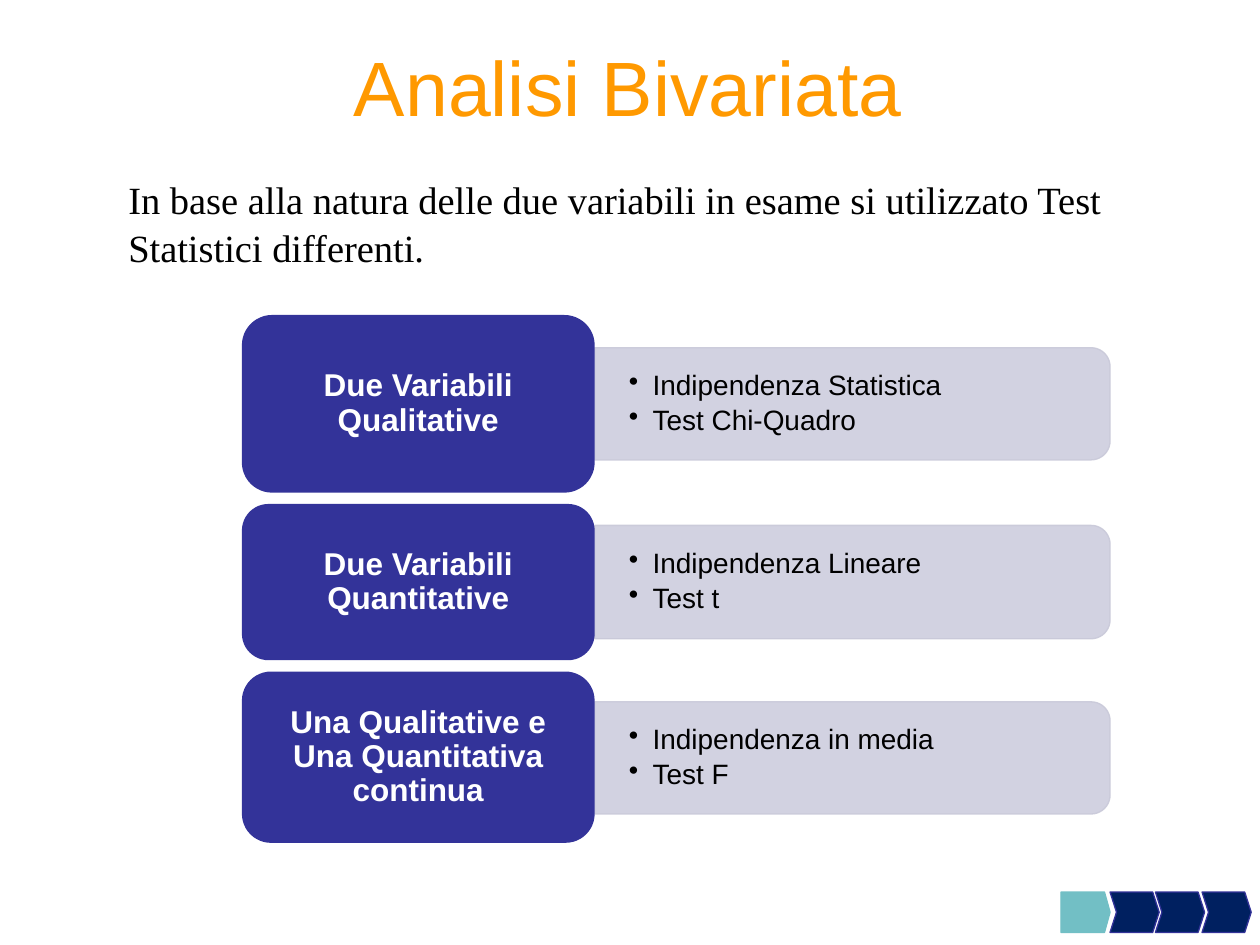
from dataclasses import dataclass
from math import cos, pi, sin

from lxml.etree import SubElement
from pptx import Presentation
from pptx.dml.color import RGBColor
from pptx.enum.shapes import MSO_SHAPE
from pptx.enum.text import MSO_ANCHOR, PP_ALIGN
from pptx.oxml.ns import qn
from pptx.shapes.autoshape import Shape
from pptx.slide import Slide
from pptx.text.text import TextFrame, _Paragraph
from pptx.util import Inches, Pt

ORANGE = RGBColor(0xFF, 0x99, 0x00)
BLACK = RGBColor(0x00, 0x00, 0x00)
WHITE = RGBColor(0xFF, 0xFF, 0xFF)
BLUE = RGBColor(0x33, 0x33, 0x99)
NAVY = RGBColor(0x00, 0x20, 0x60)
TEAL = RGBColor(0x72, 0xBF, 0xC5)
PALE = RGBColor(0xCE, 0xCE, 0xDE)
EDGE = RGBColor(0xC9, 0xC9, 0xD9)

LEFT, SPLIT, RIGHT = 1.92, 4.72, 8.81
CURVE = 0.15


@dataclass
class Row:
    name: str
    tests: tuple[str, ...]
    top: float
    height: float
    bar_top: float
    bar_height: float


@dataclass
class Step:
    left: float
    kind: MSO_SHAPE
    point: float
    fill: RGBColor
    edge: RGBColor


ROWS = (
    Row("Due Variabili Qualitative", ("Indipendenza Statistica", "Test Chi-Quadro"), 2.5, 1.41, 2.76, 0.89),
    Row("Due Variabili Quantitative", ("Indipendenza Lineare", "Test t"), 4, 1.24, 4.17, 0.9),
    Row("Una Qualitative e Una Quantitativa continua", ("Indipendenza in media", "Test F"), 5.33, 1.36, 5.57, 0.89),
)
STEPS = (
    Step(8.42, MSO_SHAPE.PENTAGON, 0.138, TEAL, TEAL),
    *(Step(left, MSO_SHAPE.CHEVRON, 0.16, NAVY, BLUE) for left in (8.81, 9.17, 9.54)),
)


def add_run(para: _Paragraph, text: str, size: float, color: RGBColor,
            font: str = "Arial", bold: bool = False) -> None:
    run = para.add_run()
    run.text = text
    run.font.size = Pt(size)
    run.font.name = font
    run.font.bold = bold
    run.font.color.rgb = color


def set_frame(frame: TextFrame, left: float, top: float, right: float) -> None:
    frame.word_wrap = True
    frame.vertical_anchor = MSO_ANCHOR.MIDDLE
    frame.margin_left, frame.margin_right = Inches(left), Inches(right)
    frame.margin_top = frame.margin_bottom = Inches(top)


def add_label(slide: Slide, left: float, top: float, width: float, height: float) -> TextFrame:
    box = slide.shapes.add_textbox(Inches(left), Inches(top), Inches(width), Inches(height))
    box.text_frame.word_wrap = True
    return box.text_frame


def paint(shape: Shape, fill: RGBColor, edge: RGBColor | None = None) -> None:
    shape.shadow.inherit = False
    shape.fill.solid()
    shape.fill.fore_color.rgb = fill
    if edge is None:
        shape.line.fill.background()
    else:
        shape.line.color.rgb = edge
        shape.line.width = Pt(0.75)


def fade(shape: Shape) -> None:
    for color in shape._element.spPr.iter(qn("a:srgbClr")):
        SubElement(color, qn("a:alpha"), val="90000")


def add_bullet(para: _Paragraph) -> None:
    props = para._p.get_or_add_pPr()
    props.set("marL", str(Inches(0.19)))
    props.set("indent", str(Inches(-0.19)))
    SubElement(props, qn("a:buChar"), char="•")


def add_bar(slide: Slide, row: Row) -> None:
    low = row.bar_top + row.bar_height
    turns = [i * pi / 20 for i in range(11)]
    edge = RIGHT - CURVE
    upper = [(edge + CURVE * sin(t), row.bar_top + CURVE * (1 - cos(t))) for t in turns]
    lower = [(edge + CURVE * cos(t), low - CURVE * (1 - sin(t))) for t in turns]
    points = [(Inches(x), Inches(y)) for x, y in [*upper, *lower, (SPLIT, low)]]
    pen = slide.shapes.build_freeform(Inches(SPLIT), Inches(row.bar_top))
    pen.add_line_segments(points, close=True)
    bar = pen.convert_to_shape()
    paint(bar, PALE, EDGE)
    fade(bar)
    frame = bar.text_frame
    set_frame(frame, 0.27, 0.18, 0.31)
    for i, test in enumerate(row.tests):
        para = frame.add_paragraph() if i else frame.paragraphs[0]
        para.alignment = PP_ALIGN.LEFT
        para.level = 1
        para.line_spacing = 0.9
        para.space_after = Pt(2.8)
        add_bullet(para)
        add_run(para, test, 16, BLACK)


def add_head(slide: Slide, row: Row) -> None:
    head = slide.shapes.add_shape(MSO_SHAPE.ROUNDED_RECTANGLE, Inches(LEFT), Inches(row.top),
                                  Inches(SPLIT - LEFT), Inches(row.height))
    head.adjustments[0] = 0.17
    paint(head, BLUE)
    set_frame(head.text_frame, 0.07, 0.04, 0.07)
    para = head.text_frame.paragraphs[0]
    para.alignment = PP_ALIGN.CENTER
    para.line_spacing = 0.9
    add_run(para, row.name, 18, WHITE, bold=True)


def add_step(slide: Slide, step: Step) -> None:
    shape = slide.shapes.add_shape(step.kind, Inches(step.left), Inches(7.08), Inches(0.39), Inches(0.32))
    shape.adjustments[0] = step.point
    paint(shape, step.fill, step.edge)


def main() -> None:
    """Build the bivariate analysis slide."""
    deck = Presentation()
    deck.slide_width, deck.slide_height = Inches(10), Inches(7.5)
    slide = deck.slides.add_slide(deck.slide_layouts[6])

    title = add_label(slide, 0.1, 0.21, 9.77, 0.94)
    title.vertical_anchor = MSO_ANCHOR.MIDDLE
    title.paragraphs[0].alignment = PP_ALIGN.CENTER
    add_run(title.paragraphs[0], "Analisi Bivariata", 44, ORANGE)

    intro = add_label(slide, 0.92, 1.33, 8.25, 0.84).paragraphs[0]
    intro.line_spacing = 1.04
    add_run(intro, "In base alla natura delle due variabili in esame si utilizzato "
            "Test Statistici differenti.", 22, BLACK, "Times New Roman")

    for step in STEPS:
        add_step(slide, step)
    for row in ROWS:
        add_bar(slide, row)
        add_head(slide, row)
    deck.save("out.pptx")


if __name__ == "__main__":
    main()
